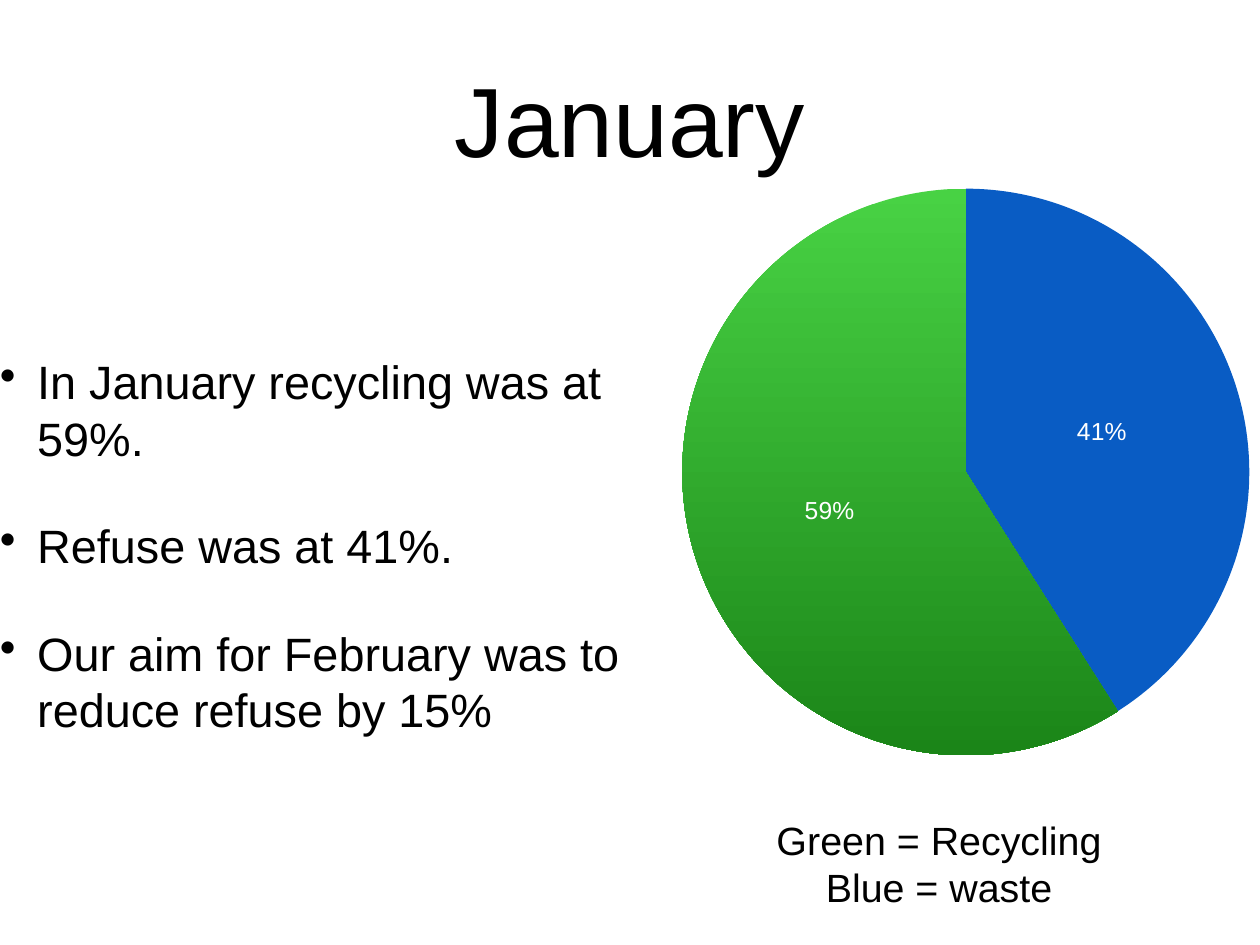
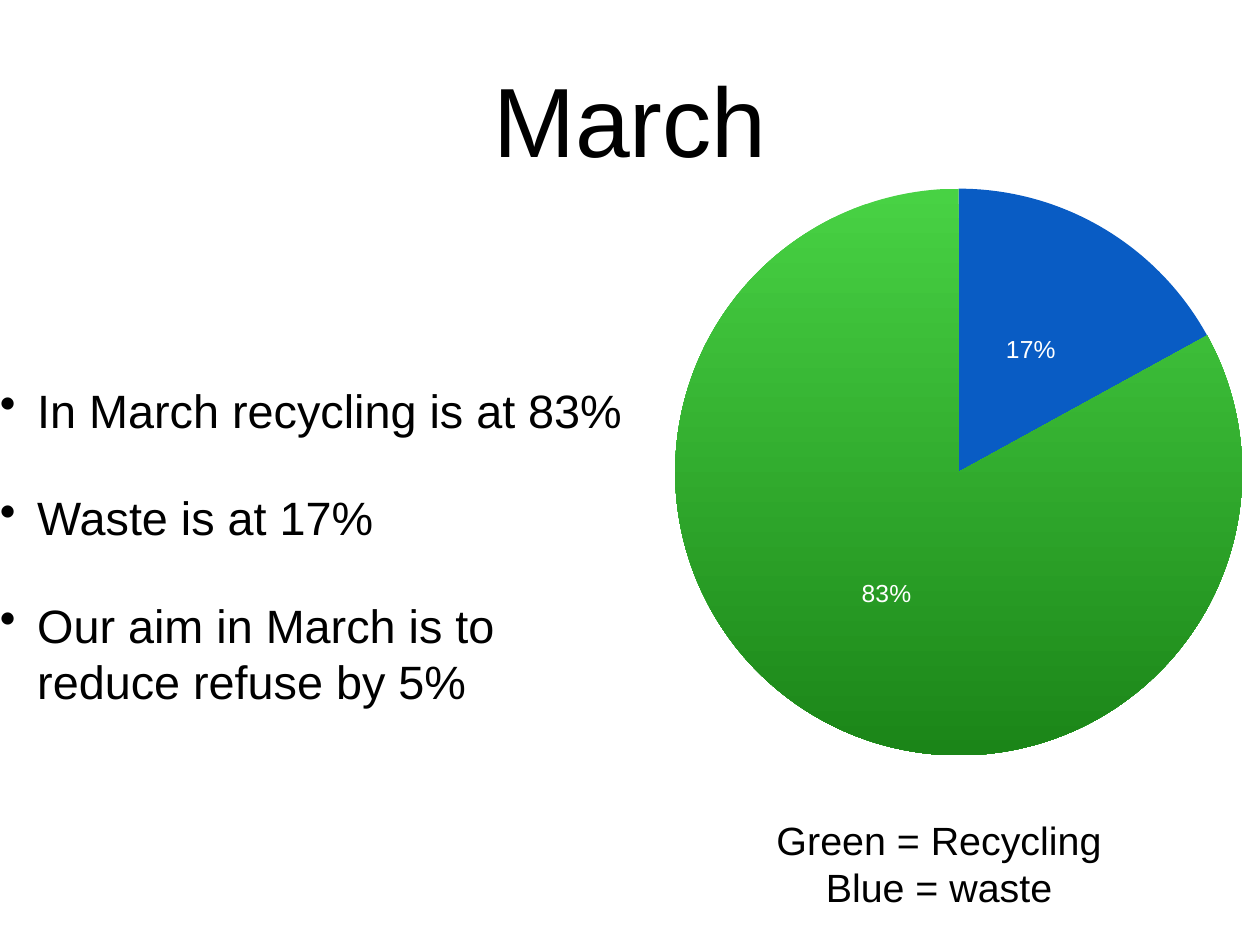
from dataclasses import dataclass

from lxml import etree
from pptx import Presentation
from pptx import util as u
from pptx.chart.data import CategoryChartData
from pptx.dml.color import RGBColor
from pptx.enum import chart as charts, text
from pptx.oxml import parse_xml
from pptx.oxml.ns import nsdecls, qn

EMU_PER_PX = 9144


@dataclass(frozen=True)
class Theme:
    font: str = "Arial"
    ink: RGBColor = RGBColor(0x00, 0x00, 0x00)
    label_ink: RGBColor = RGBColor(0xFF, 0xFF, 0xFF)
    waste: RGBColor = RGBColor(0x09, 0x5C, 0xC4)
    recycling: tuple = (RGBColor(0x48, 0xD2, 0x44), RGBColor(0x1B, 0x85, 0x18))
    title_size: int = 80
    body_size: int = 38
    key_size: int = 32
    label_size: int = 20
    bullet_gap: int = 42
    bullet_indent: int = 42


THEME = Theme()

SLIDE_SIZE = (1422, 1067)
TITLE_BOX = (139, 0, 1144, 267)
KEY_BOX = (770, 921, 580, 124)
KEY_LINES = ["Green = Recycling", "Blue = waste"]
PIE_TOP, PIE_SIZE = 213, 640

# Title, bullet box, bullets, left of the pie, waste and recycling shares
MONTHS = [
    ("January", (0, 192, 713, 847),
     ["In January recycling was at 59%.",
      "Refuse was at 41%.",
      "Our aim for February was to reduce refuse by 15%"],
     770, (41, 59)),
    ("March", (0, 303, 720, 625),
     ["In March recycling is at 83%",
      "Waste is at 17%",
      "Our aim in March is to reduce refuse by 5%"],
     762, (17, 83)),
]


def px(length):
    return u.Emu(length * EMU_PER_PX)


def style_font(font, size, color):
    font.name = THEME.font
    font.size = u.Pt(size)
    font.color.rgb = color


def add_text(slide, box, lines, size, align=text.PP_ALIGN.CENTER,
             anchor=text.MSO_ANCHOR.MIDDLE):
    """Add a text box without margins and return its paragraphs."""
    frame = slide.shapes.add_textbox(*map(px, box)).text_frame
    frame.word_wrap = True
    frame.vertical_anchor = anchor
    frame.margin_left = frame.margin_top = 0
    frame.margin_right = frame.margin_bottom = 0
    frame.text = "\n".join(lines)
    for paragraph in frame.paragraphs:
        paragraph.alignment = align
        style_font(paragraph.font, size, THEME.ink)
    return frame.paragraphs


def add_bullets(slide, box, lines):
    indent = px(THEME.bullet_indent)
    for paragraph in add_text(slide, box, lines, THEME.body_size,
                              text.PP_ALIGN.LEFT):
        paragraph.space_before = u.Pt(THEME.bullet_gap)
        properties = paragraph._p.get_or_add_pPr()
        properties.set("marL", str(indent))
        properties.set("indent", str(-indent))
        bullet = parse_xml(f'<a:buChar {nsdecls("a")} char="•"/>')
        properties.find(qn("a:spcBef")).addnext(bullet)


def fill_plot_area(chart):
    """Let the pie take up the whole chart frame."""
    plot_area = chart.plots[0]._element.getparent()
    for layout in plot_area.findall(qn("c:layout")):
        plot_area.remove(layout)
    layout = parse_xml(f'<c:layout {nsdecls("c")}/>')
    manual = etree.SubElement(layout, qn("c:manualLayout"))
    settings = [("layoutTarget", "inner"), ("xMode", "edge"),
                ("yMode", "edge"), ("x", "0"), ("y", "0"),
                ("w", "1"), ("h", "1")]
    for name, value in settings:
        etree.SubElement(manual, qn(f"c:{name}")).set("val", value)
    plot_area.insert(0, layout)


def color_slices(series):
    waste, recycling = (series.points[i].format for i in range(2))
    waste.fill.solid()
    waste.fill.fore_color.rgb = THEME.waste
    recycling.fill.gradient()
    recycling.fill.gradient_angle = 270
    for stop, color in zip(recycling.fill.gradient_stops, THEME.recycling):
        stop.color.rgb = color
    for slice_format in (waste, recycling):
        slice_format.line.fill.background()


def add_pie(slide, left, shares):
    data = CategoryChartData()
    data.categories = ["1", "2"]
    data.add_series("Region 1", shares)
    box = (left, PIE_TOP, PIE_SIZE, PIE_SIZE)
    chart = slide.shapes.add_chart(
        charts.XL_CHART_TYPE.PIE, *map(px, box), data).chart
    chart.has_title = False
    chart.has_legend = False
    style_font(chart.font, THEME.label_size, THEME.ink)
    fill_plot_area(chart)

    plot = chart.plots[0]
    plot.vary_by_categories = True
    color_slices(plot.series[0])
    plot.has_data_labels = True
    labels = plot.data_labels
    labels.show_value = False
    labels.show_percentage = True
    labels.number_format = "#,##0%"
    labels.number_format_is_linked = False
    labels.position = charts.XL_LABEL_POSITION.CENTER
    style_font(labels.font, THEME.label_size, THEME.label_ink)


def add_month(presentation, title, bullet_box, bullets, pie_left, shares):
    slide = presentation.slides.add_slide(presentation.slide_layouts[6])
    add_text(slide, TITLE_BOX, [title], THEME.title_size)
    add_bullets(slide, bullet_box, bullets)
    add_pie(slide, pie_left, shares)
    add_text(slide, KEY_BOX, KEY_LINES, THEME.key_size,
             anchor=text.MSO_ANCHOR.TOP)


def main():
    presentation = Presentation()
    presentation.slide_width, presentation.slide_height = map(px, SLIDE_SIZE)
    for month in MONTHS:
        add_month(presentation, *month)
    presentation.save("out.pptx")


if __name__ == "__main__":
    main()
